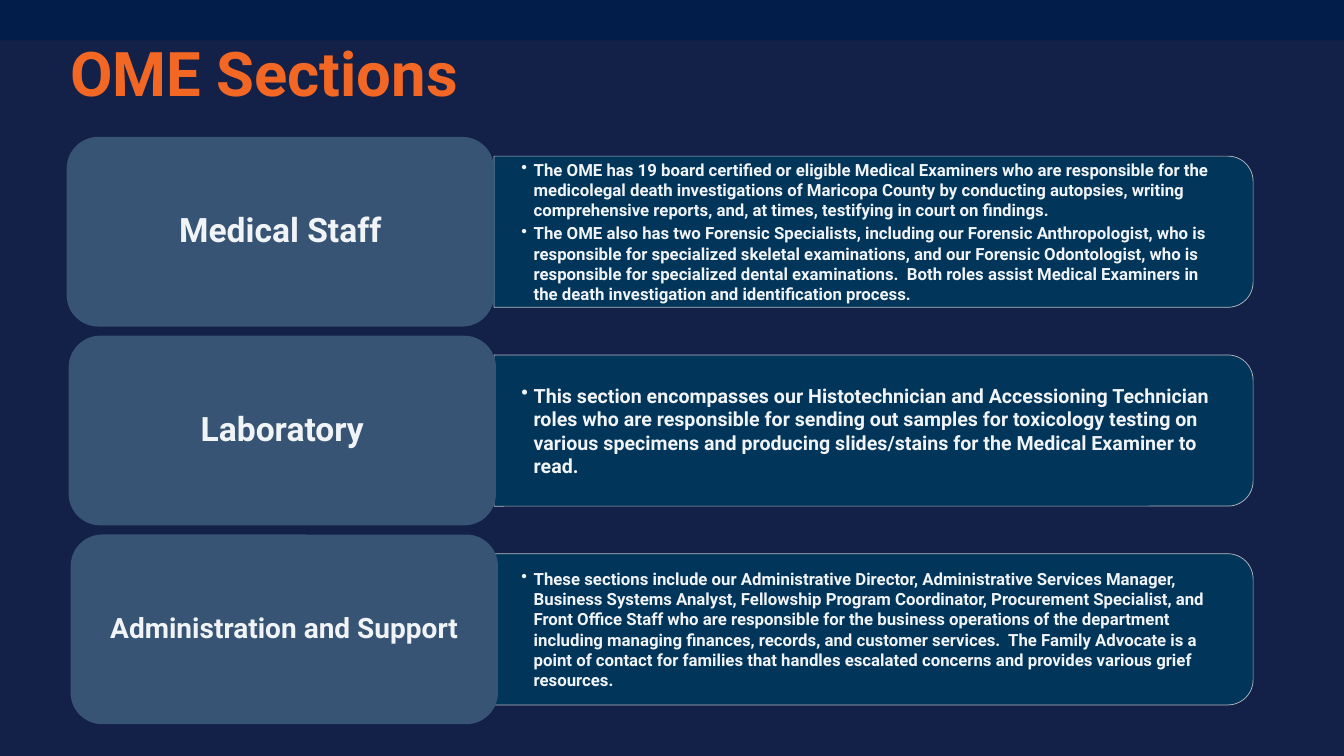
from dataclasses import dataclass

from lxml.etree import SubElement
from pptx import Presentation
from pptx.dml.color import RGBColor
from pptx.enum.shapes import MSO_SHAPE as SHAPE
from pptx.enum.text import MSO_ANCHOR as ANCHOR, PP_ALIGN as ALIGN
from pptx.oxml.ns import qn
from pptx.shapes.autoshape import Shape
from pptx.slide import Slide
from pptx.text.text import TextFrame, _Paragraph as Paragraph
from pptx.util import Cm, Pt

SLIDE_W, SLIDE_H = 33.87, 19.05
FIRST_CENTRE, PITCH = 5.84, 5.01
LABEL_LEFT, LABEL_STEP, LABEL_W, LABEL_H = 1.68, 0.05, 10.77, 4.78
BAR_LEFT, BAR_W, BAR_H = 12.45, 19.13, 3.81
TEXT_W, TEXT_H = 18.95, 3.45
BULLET_INDENT = 0.31

NAVY, BAND, ORANGE = "132048", "021D49", "F26724"
SLATE, BAR, BAR_LINE, PALE = "375474", "00385C", "CCCDCF", "F1F4F7"


@dataclass
class Section:
    label: str
    label_size: int
    text_size: int
    bullets: list[str]


SECTIONS = [
    Section("Medical Staff", 24, 12, [
        "The OME has 19 board certified or eligible Medical Examiners who are responsible "
        "for the medicolegal death investigations of Maricopa County by conducting autopsies, "
        "writing comprehensive reports, and, at times, testifying in court on findings.",
        "The OME also has two Forensic Specialists, including our Forensic Anthropologist, "
        "who is responsible for specialized skeletal examinations, and our Forensic "
        "Odontologist, who is responsible for specialized dental examinations.  Both roles "
        "assist Medical Examiners in the death investigation and identification process.",
    ]),
    Section("Laboratory", 24, 14, [
        "This section encompasses our Histotechnician and Accessioning Technician roles who "
        "are responsible for sending out samples for toxicology testing on various specimens "
        "and producing slides/stains for the Medical Examiner to read.",
    ]),
    Section("Administration and Support", 20, 12, [
        "These sections include our Administrative Director, Administrative Services Manager, "
        "Business Systems Analyst, Fellowship Program Coordinator, Procurement Specialist, and "
        "Front Office Staff who are responsible for the business operations of the department "
        "including managing finances, records, and customer services.  The Family Advocate is "
        "a point of contact for families that handles escalated concerns and provides various "
        "grief resources.",
    ]),
]


def rgb(value: str) -> RGBColor:
    return RGBColor.from_string(value)


def add_box(s: Slide, kind: SHAPE, x: float, y: float, w: float, h: float, fill: str) -> Shape:
    sp = s.shapes.add_shape(kind, Cm(x), Cm(y), Cm(w), Cm(h))
    sp.shadow.inherit = False
    sp.fill.solid()
    sp.fill.fore_color.rgb = rgb(fill)
    sp.line.fill.background()
    return sp


def add_text_box(s: Slide, x: float, y: float, w: float, h: float) -> TextFrame:
    tf = s.shapes.add_textbox(Cm(x), Cm(y), Cm(w), Cm(h)).text_frame
    tf.word_wrap = True
    tf.vertical_anchor = ANCHOR.MIDDLE
    return tf


def format_runs(p: Paragraph, size: int, color: str) -> None:
    for r in p.runs:
        r.font.name = "Roboto"
        r.font.size = Pt(size)
        r.font.bold = True
        r.font.color.rgb = rgb(color)


def add_bullet(p: Paragraph) -> None:
    pPr = p._p.get_or_add_pPr()
    pPr.set("marL", str(Cm(BULLET_INDENT)))
    pPr.set("indent", str(-Cm(BULLET_INDENT)))
    SubElement(pPr, qn("a:buChar"), char="•")


def add_bar(s: Slide, centre: float) -> None:
    """Turn a top-rounded rectangle so that its rounded end faces right."""
    x = BAR_LEFT + (BAR_W - BAR_H) / 2
    sp = add_box(s, SHAPE.ROUND_2_SAME_RECTANGLE, x, centre - BAR_W / 2, BAR_H, BAR_W, BAR)
    sp.rotation = 90
    sp.line.color.rgb = rgb(BAR_LINE)
    sp.line.width = Pt(0.5)
    for color in sp._element.spPr.iter(qn("a:srgbClr")):
        SubElement(color, qn("a:alpha"), val="90000")


def add_bullets(s: Slide, section: Section, centre: float) -> None:
    tf = add_text_box(s, BAR_LEFT, centre - TEXT_H / 2, TEXT_W, TEXT_H)
    tf.margin_left = tf.margin_right = Cm(0.69)
    tf.margin_top = tf.margin_bottom = Cm(0.36)
    for i, bullet in enumerate(section.bullets):
        p = tf.add_paragraph() if i else tf.paragraphs[0]
        p.text = bullet
        p.level = 1
        p.space_after = Pt(2)
        add_bullet(p)
        format_runs(p, section.text_size, PALE)


def add_label(s: Slide, section: Section, x: float, centre: float) -> None:
    sp = add_box(s, SHAPE.ROUNDED_RECTANGLE, x, centre - LABEL_H / 2, LABEL_W, LABEL_H, SLATE)
    tf = sp.text_frame
    tf.text = section.label
    tf.word_wrap = True
    tf.vertical_anchor = ANCHOR.MIDDLE
    p = tf.paragraphs[0]
    p.alignment = ALIGN.CENTER
    p.line_spacing = 0.9
    format_runs(p, section.label_size, PALE)


def add_title(s: Slide, title: str) -> None:
    tf = add_text_box(s, 1.52, 1.0, 29.21, 1.85)
    tf.text = title
    p = tf.paragraphs[0]
    p.line_spacing = 0.9
    format_runs(p, 44, ORANGE)


def main() -> None:
    prs = Presentation()
    prs.slide_width, prs.slide_height = Cm(SLIDE_W), Cm(SLIDE_H)
    s = prs.slides.add_slide(prs.slide_layouts[6])
    s.background.fill.solid()
    s.background.fill.fore_color.rgb = rgb(NAVY)
    add_box(s, SHAPE.RECTANGLE, 0, 0, SLIDE_W, 1.02, BAND)
    add_title(s, "OME Sections")
    for i, section in enumerate(SECTIONS):
        centre = FIRST_CENTRE + i * PITCH
        add_bar(s, centre)
        add_bullets(s, section, centre)
        add_label(s, section, LABEL_LEFT + i * LABEL_STEP, centre)
    prs.save("out.pptx")


if __name__ == "__main__":
    main()
